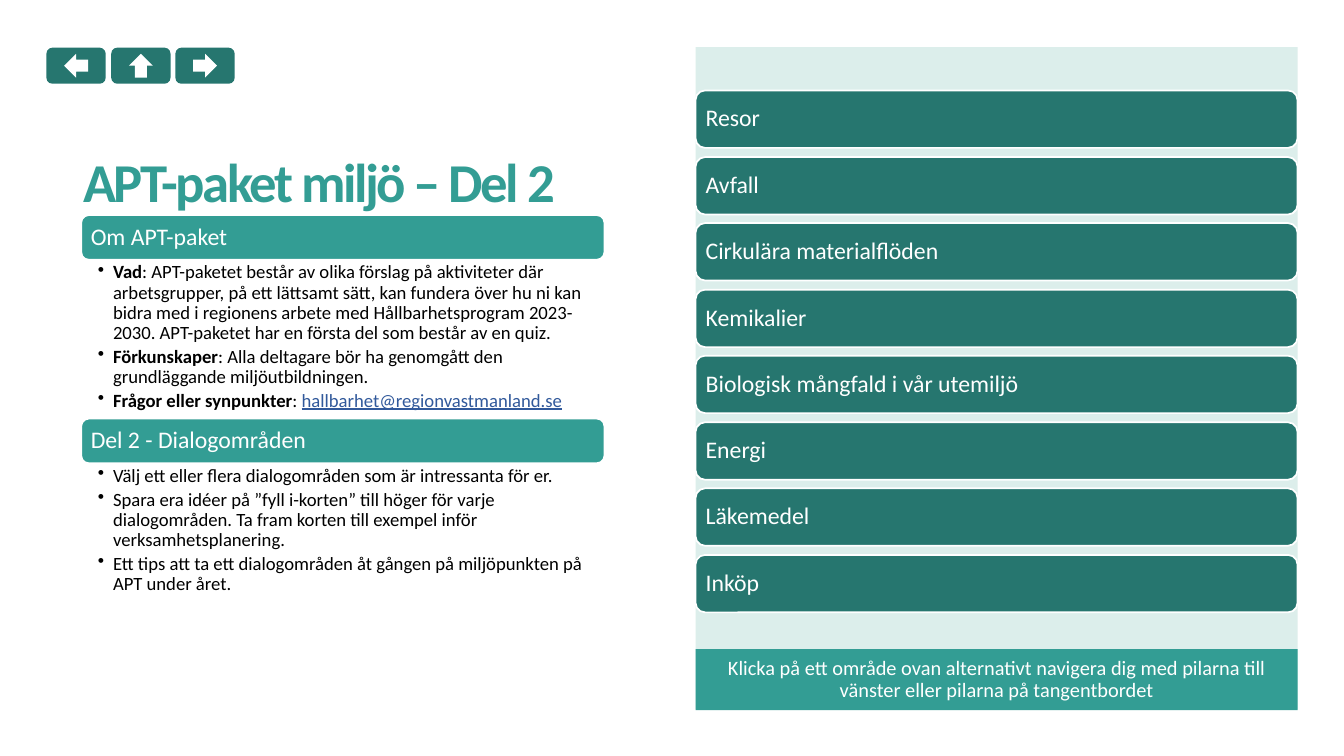
"""Build the "APT-paket miljö – Del 2" menu slide with topics, guidance and navigation arrows."""
import pptx
import pptx.dml.color
import pptx.enum.shapes
import pptx.enum.text
import pptx.oxml
import pptx.util
from lxml import etree

PX = 9144
TEAL, DARK_TEAL, PALE_TEAL = "339D94", "26766F", "DCEEEB"
WHITE, BLACK, LINK_BLUE = "FFFFFF", "000000", "31599B"
PRESET = pptx.enum.shapes.MSO_SHAPE
ANCHOR = pptx.enum.text.MSO_ANCHOR
ALIGN = pptx.enum.text.PP_ALIGN
hex_color = pptx.dml.color.RGBColor.from_string


def add_block(preset, box, fill, outline=None, rotation=0):
    """Add a flat filled shape, optionally outlined."""
    block = slide.shapes.add_shape(preset, *[side * PX for side in box])
    block.shadow.inherit = False
    block.rotation = rotation
    block.fill.solid()
    block.fill.fore_color.rgb = hex_color(fill)
    if outline:
        block.line.color.rgb = hex_color(outline)
        block.line.width = pptx.util.Pt(2)
    else:
        block.line.fill.background()
    return block


def write(frame, paragraphs, size, color, margins, anchor=ANCHOR.MIDDLE,
          align=ALIGN.LEFT, spacing=0.9, after=0, bullet=False):
    """Fill a text frame with paragraphs, each a list of (text, font values) runs."""
    frame.word_wrap = True
    frame.auto_size = pptx.enum.text.MSO_AUTO_SIZE.NONE
    frame.vertical_anchor = anchor
    for side, margin in zip(("left", "top", "right", "bottom"), margins):
        setattr(frame, f"margin_{side}", margin * PX)
    for index, runs in enumerate(paragraphs):
        paragraph = frame.add_paragraph() if index else frame.paragraphs[0]
        if bullet:
            properties = paragraph._p.get_or_add_pPr()
            properties.set("marL", str(25 * PX))
            properties.set("indent", str(-25 * PX))
            etree.SubElement(properties, pptx.oxml.ns.qn("a:buChar")).set("char", "•")
        paragraph.alignment = align
        paragraph.line_spacing = spacing
        paragraph.space_after = pptx.util.Pt(after)
        for text, values in runs:
            run = paragraph.add_run()
            run.text = text
            font_values = {"name": "Calibri", "size": pptx.util.Pt(size), "color": color} | values
            run.font.color.rgb = hex_color(font_values.pop("color"))
            for name, value in font_values.items():
                setattr(run.font, name, value)


presentation = pptx.Presentation()
presentation.slide_width = 2199 * PX
presentation.slide_height = 1237 * PX
slide = presentation.slides.add_slide(presentation.slide_layouts[5])

title = slide.shapes.title
title.left, title.top, title.width, title.height = [side * PX for side in (136, 134, 856, 223)]
write(title.text_frame, [[("APT-paket miljö – Del 2", {"bold": True})]], 64.5, TEAL,
      (0, 0, 0, 8), anchor=ANCHOR.BOTTOM, spacing=0.85)
title.text_frame.paragraphs[0].runs[0].font._element.set("spc", "-280")

add_block(PRESET.RECTANGLE, (1138, 77, 985, 1083), PALE_TEAL)
topics = ["Resor", "Avfall", "Cirkulära materialflöden", "Kemikalier",
          "Biologisk mångfald i vår utemiljö", "Energi", "Läkemedel", "Inköp"]
first_topic_top, last_topic_top = 148, 908
topic_step = (last_topic_top - first_topic_top) / (len(topics) - 1)
for index, topic in enumerate(topics):
    top = round(first_topic_top + index * topic_step)
    button = add_block(PRESET.ROUNDED_RECTANGLE, (1138, top, 985, 94), DARK_TEAL, WHITE)
    write(button.text_frame, [[(topic, {})]], 28, WHITE, (12, 12, 12, 12))

bold = {"bold": True}
sections = [
    ("Om APT-paket", 352, 260, [
        [("Vad", bold),
         (": APT-paketet består av olika förslag på aktiviteter där arbetsgrupper, på ett "
          "lättsamt sätt, kan fundera över hu ni kan bidra med i regionens arbete med "
          "Hållbarhetsprogram 2023-2030. APT-paketet har en första del som består av en quiz.", {})],
        [("Förkunskaper", bold),
         (": Alla deltagare bör ha genomgått den grundläggande miljöutbildningen.", {})],
        [("Frågor eller synpunkter", bold), (": ", {}),
         ("hallbarhet@regionvastmanland.se", {"color": LINK_BLUE, "underline": True})],
    ]),
    ("Del 2 - Dialogområden", 685, 228, [
        [("Välj ett eller flera dialogområden som är intressanta för er.", {})],
        [("Spara era idéer på ”fyll i-korten” till höger för varje dialogområden. "
          "Ta fram korten till exempel inför verksamhetsplanering.", {})],
        [("Ett tips att ta ett dialogområden åt gången på miljöpunkten på APT under året.", {})],
    ]),
]
for heading, top, body_height, points in sections:
    band = add_block(PRESET.ROUNDED_RECTANGLE, (133, top, 856, 73), TEAL, WHITE)
    write(band.text_frame, [[(heading, {})]], 28, WHITE, (12, 12, 12, 12))
    body = slide.shapes.add_textbox(*[side * PX for side in (133, top + 74, 856, body_height)])
    write(body.text_frame, points, 22, BLACK, (27, 4, 22, 4), anchor=ANCHOR.TOP,
          after=4.4, bullet=True)

for index, direction in enumerate((180, 270, 0)):
    left = 76 + round(index * 105.5)
    add_block(PRESET.ROUNDED_RECTANGLE, (left, 78, 97, 59), DARK_TEAL)
    add_block(PRESET.RIGHT_ARROW, (left + 29, 88, 39, 39), WHITE, rotation=direction)

hint = add_block(PRESET.RECTANGLE, (1138, 1062, 985, 100), TEAL)
write(hint.text_frame, [[("Klicka på ett område ovan alternativt navigera dig med pilarna till "
                          "vänster eller pilarna på tangentbordet", {})]],
      24, WHITE, (10, 5, 10, 5), align=ALIGN.CENTER)

presentation.save("out.pptx")
